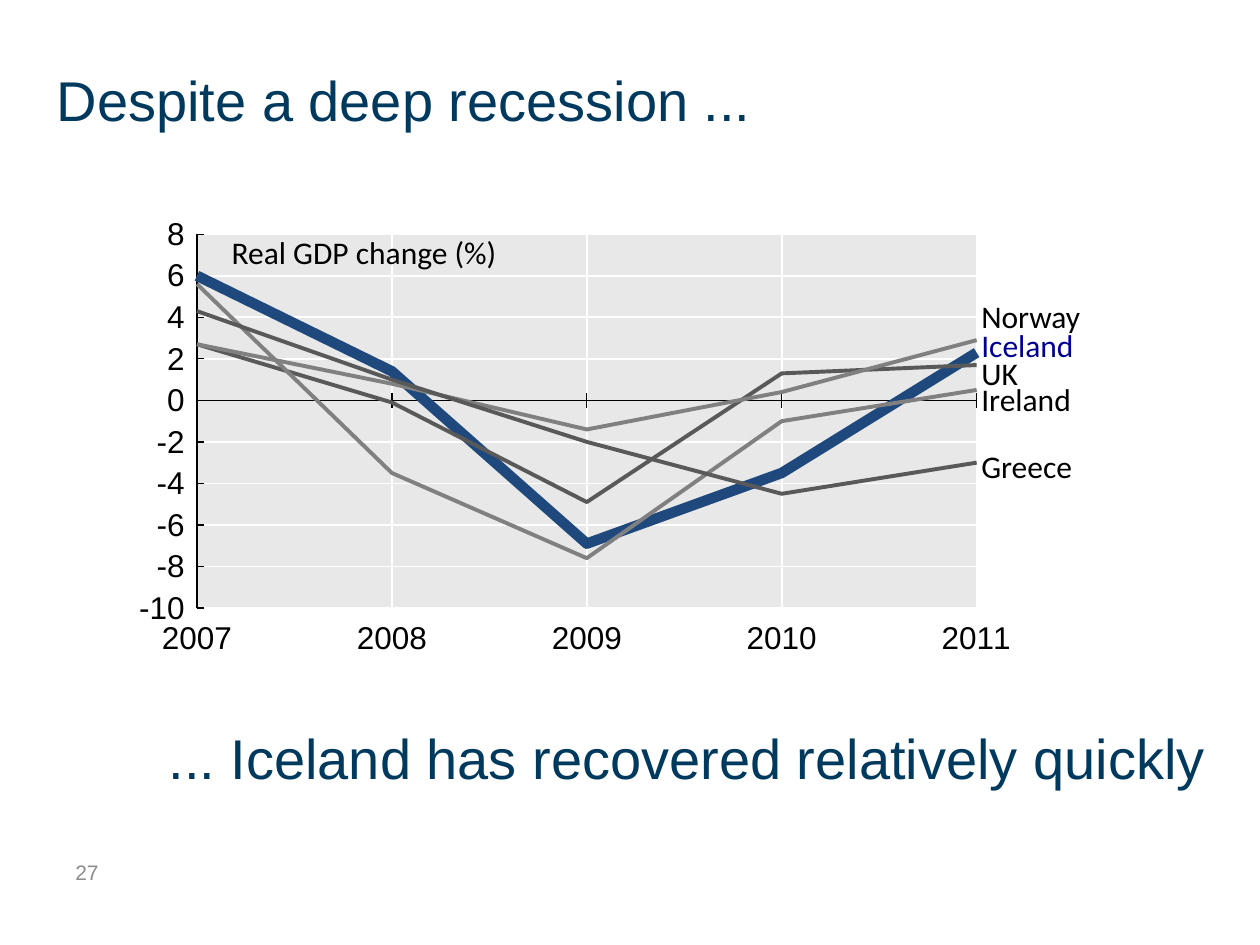
import pptx
import pptx.chart.data
import pptx.dml.color
import pptx.enum.chart
import pptx.enum.text
import pptx.oxml
import pptx.oxml.ns
import pptx.util
from pptx.util import Inches

YEARS = range(2007, 2012)
# Country: GDP change by year, line colour, line width
GDP = {
    "Greece": ([4.3, 1, -2, -4.5, -3], "595959", 2.25),
    "Ireland": ([5.6, -3.5, -7.6, -1, 0.5], "808080", 2.25),
    "Norway": ([2.7, 0.8, -1.4, 0.4, 2.9], "808080", 2.25),
    "UK": ([2.7, -0.1, -4.9, 1.3, 1.7], "595959", 2.25),
    "Iceland": ([6, 1.4, -6.9, -3.5, 2.3], "1F497D", 6),
}
# Country: top of its label
LABEL_TOPS = {"Norway": 2.31, "Iceland": 2.54, "UK": 2.76,
              "Ireland": 2.97, "Greece": 3.5}
PLOT_LAYOUT = {"x": 0.084, "y": 0.076, "w": 0.834, "h": 0.729}
HEADING = {"size": 32, "color": "00395E", "middle": True}


def rgb(color):
    return pptx.dml.color.RGBColor.from_string(color)


def format_font(font, size, color, name):
    font.size = pptx.util.Pt(size)
    font.name = name
    font.color.rgb = rgb(color)


def format_line(line, color, width):
    line.color.rgb = rgb(color)
    line.width = pptx.util.Pt(width)


def place(sp, left, top, width, height):
    sp.left, sp.top = Inches(left), Inches(top)
    sp.width, sp.height = Inches(width), Inches(height)


def write(sp, text, size=18, color="000000", font="Arial", middle=False):
    tf = sp.text_frame
    tf.word_wrap = True
    tf.auto_size = pptx.enum.text.MSO_AUTO_SIZE.NONE
    anchor = pptx.enum.text.MSO_ANCHOR
    tf.vertical_anchor = anchor.MIDDLE if middle else anchor.TOP
    p = tf.paragraphs[0]
    p.alignment = pptx.enum.text.PP_ALIGN.LEFT
    r = p.add_run()
    r.text = text
    format_font(r.font, size, color, font)


def add_text(s, text, left, top, width, height, **fmt):
    sp = s.shapes.add_textbox(*map(Inches, (left, top, width, height)))
    write(sp, text, **fmt)


def format_axis(axis, low, high, step, tick):
    axis.minimum_scale, axis.maximum_scale = low, high
    axis.major_unit = step
    axis.major_tick_mark = tick
    axis.minor_tick_mark = pptx.enum.chart.XL_TICK_MARK.NONE
    axis.tick_label_position = pptx.enum.chart.XL_TICK_LABEL_POSITION.LOW
    axis.tick_labels.number_format = "General"
    axis.tick_labels.number_format_is_linked = False
    format_font(axis.tick_labels.font, 18, "000000", "Arial")
    format_line(axis.format.line, "000000", 0.75)
    axis.has_major_gridlines = True
    format_line(axis.major_gridlines.format.line, "FFFFFF", 1)


def format_plot_area(chart):
    """Fix the inner plot position and give it a translucent grey fill."""
    ns = pptx.oxml.ns.nsdecls("c", "a")
    area = chart.plots[0]._element.getparent()
    for old in area.findall(pptx.oxml.ns.qn("c:layout")):
        area.remove(old)
    modes = '<c:xMode val="edge"/><c:yMode val="edge"/>'
    sides = "".join(f'<c:{k} val="{v}"/>' for k, v in PLOT_LAYOUT.items())
    area.insert(0, pptx.oxml.parse_xml(
        f'<c:layout {ns}><c:manualLayout><c:layoutTarget val="inner"/>'
        f'{modes}{sides}</c:manualLayout></c:layout>'))
    area.append(pptx.oxml.parse_xml(
        f'<c:spPr {ns}><a:solidFill><a:srgbClr val="E1E1E1">'
        '<a:alpha val="75000"/></a:srgbClr></a:solidFill>'
        '<a:ln><a:noFill/></a:ln></c:spPr>'))


def add_gdp_chart(s, left, top, width, height):
    data = pptx.chart.data.XyChartData()
    for country, (values, _, _) in GDP.items():
        series = data.add_series(country)
        for year, value in zip(YEARS, values):
            series.add_data_point(year, value)
    chart = s.shapes.add_chart(
        pptx.enum.chart.XL_CHART_TYPE.XY_SCATTER_LINES_NO_MARKERS,
        *map(Inches, (left, top, width, height)), data).chart
    chart.has_legend = False
    chart.has_title = False
    format_font(chart.font, 8, "000000", "Arial")
    chart.plots[0].vary_by_categories = False
    for series, (_, color, line_width) in zip(chart.plots[0].series, GDP.values()):
        series.smooth = False
        series.marker.style = pptx.enum.chart.XL_MARKER_STYLE.NONE
        format_line(series.format.line, color, line_width)
    tick = pptx.enum.chart.XL_TICK_MARK
    format_axis(chart.category_axis, YEARS[0], YEARS[-1], 1, tick.CROSS)
    format_axis(chart.value_axis, -10, 8, 2, tick.INSIDE)
    format_plot_area(chart)


def main():
    prs = pptx.Presentation()
    prs.slide_width, prs.slide_height = Inches(10), Inches(7.5)
    s = prs.slides.add_slide(prs.slide_layouts[5])

    # Title and page number
    place(s.shapes.title, 0.35, 0.16, 9, 1.25)
    write(s.shapes.title, "Despite a deep recession ...", **HEADING)
    add_text(s, "27", 0.5, 6.72, 2.33, 0.4, size=12, color="8C8C8C", middle=True)

    # Chart with its caption and line labels
    add_gdp_chart(s, 0.94, 1.55, 7.42, 4.07)
    add_text(s, "Real GDP change (%)", 1.74, 1.8, 3.42, 0.49, font="Calibri")
    for country, top in LABEL_TOPS.items():
        color = "000090" if country == "Iceland" else "000000"
        add_text(s, country, 7.69, top, 1.97, 0.49, font="Calibri", color=color)

    # Closing line
    add_text(s, "... Iceland has recovered relatively quickly",
             1.24, 5.38, 9, 1.25, **HEADING)
    prs.save("out.pptx")


if __name__ == "__main__":
    main()
